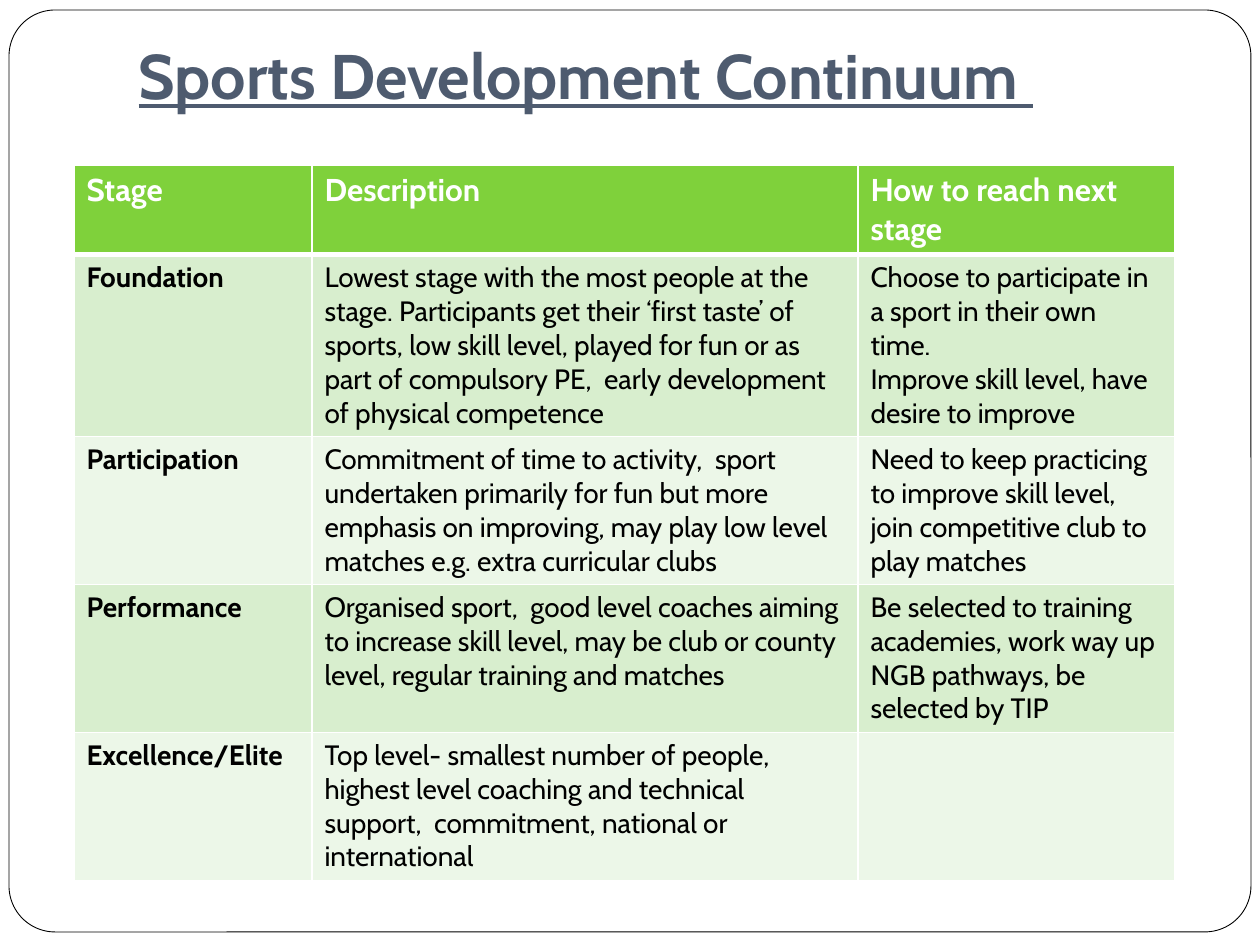
from lxml import etree
from pptx import Presentation
from pptx import util as u
from pptx.dml.color import RGBColor
from pptx.enum import shapes, text
from pptx.oxml import ns

PX = 914400 / 126
FONT = "Cabin"
COLOURS = {
    "white": "FFFFFF",
    "black": "000000",
    "title": "4E5B6F",
    "header": "7FD13B",
    "odd": "D8EECE",
    "even": "ECF7E8",
}
COLUMN_WIDTHS = [238, 546, 317]
ROW_HEIGHTS = [88, 181, 148, 148, 148]
STAGES = [
    ("Stage", "Description", "How to reach next stage"),
    (
        "Foundation",
        "Lowest stage with the most people at the stage. Participants get their ‘first taste’ of sports, "
        "low skill level, played for fun or as part of compulsory PE,  early development of physical competence",
        "Choose to participate in a sport in their own time.\nImprove skill level, have desire to improve",
    ),
    (
        "Participation",
        "Commitment of time to activity,  sport undertaken primarily for fun but more emphasis on improving, "
        "may play low level matches e.g. extra curricular clubs",
        "Need to keep practicing to improve skill level, join competitive club to play matches",
    ),
    (
        "Performance",
        "Organised sport,  good level coaches aiming to increase skill level, may be club or county level, "
        "regular training and matches",
        "Be selected to training academies, work way up NGB pathways, be selected by TIP",
    ),
    (
        "Excellence/Elite",
        "Top level- smallest number of people,  highest level coaching and technical support,  "
        "commitment, national or international",
        "",
    ),
]


def px(length):
    return u.Emu(round(length * PX))


def colour(name):
    return RGBColor.from_string(COLOURS[name])


def write(frame, words, size=16, ink="black", bold=False, underline=None):
    frame.text = words
    for para in frame.paragraphs:
        para.alignment = text.PP_ALIGN.LEFT
        for span in para.runs:
            span.font.name = FONT
            span.font.size = u.Pt(size)
            span.font.bold = bold
            span.font.underline = underline
            span.font.color.rgb = colour(ink)


class Slide:
    def __init__(self, deck):
        self.page = deck.slides.add_slide(deck.slide_layouts[5])

    def title(self, words, left, top, width, height):
        box = self.page.shapes.title
        box.left, box.top, box.width, box.height = map(px, (left, top, width, height))
        frame = box.text_frame
        frame.word_wrap = True
        frame.auto_size = text.MSO_AUTO_SIZE.NONE
        frame.vertical_anchor = text.MSO_ANCHOR.BOTTOM
        frame.margin_left = frame.margin_right = frame.margin_bottom = u.Inches(0.1)
        frame.margin_top = u.Inches(0.05)
        write(frame, words, size=36, ink="title", bold=True, underline=True)

    def border(self, left, top, width, height):
        box = self.page.shapes.add_shape(
            shapes.MSO_SHAPE.ROUNDED_RECTANGLE, *map(px, (left, top, width, height))
        )
        box.adjustments[0] = 0.05
        box.shadow.inherit = False
        box.fill.solid()
        box.fill.fore_color.rgb = colour("white")
        box.line.color.rgb = colour("black")
        box.line.width = u.Pt(0.5)
        self.page.shapes.title.element.addprevious(box.element)

    def edge(self, cell, side, points):
        line = etree.SubElement(
            cell._tc.get_or_add_tcPr(), ns.qn(f"a:ln{side}"), w=str(u.Pt(points))
        )
        fill = etree.SubElement(line, ns.qn("a:solidFill"))
        etree.SubElement(fill, ns.qn("a:srgbClr"), val=COLOURS["white"])

    def cell(self, cell, words, row, column):
        for side in "LRTB":
            heavy = (row, side) in ((0, "B"), (1, "T"))
            self.edge(cell, side, 3 if heavy else 1)
        cell.fill.solid()
        cell.fill.fore_color.rgb = colour("header" if row == 0 else "odd" if row % 2 else "even")
        if row == 0:
            write(cell.text_frame, words, size=18, ink="white", bold=True)
        else:
            write(cell.text_frame, words, bold=column == 0)

    def table(self, rows, left, top, widths, heights):
        table = self.page.shapes.add_table(
            len(rows), len(widths), *map(px, (left, top, sum(widths), sum(heights)))
        ).table
        for column, width in zip(table.columns, widths):
            column.width = px(width)
        for row, height in zip(table.rows, heights):
            row.height = px(height)
        for row, entries in enumerate(rows):
            for column, words in enumerate(entries):
                self.cell(table.cell(row, column), words, row, column)


def main():
    deck = Presentation()
    deck.slide_width, deck.slide_height = px(1260), px(945)
    slide = Slide(deck)
    slide.border(9, 10, 1242, 922)
    slide.title("Sports Development Continuum ", 126, 38, 1071, 87)
    slide.table(STAGES, 74, 165, COLUMN_WIDTHS, ROW_HEIGHTS)
    deck.save("out.pptx")


if __name__ == "__main__":
    main()
